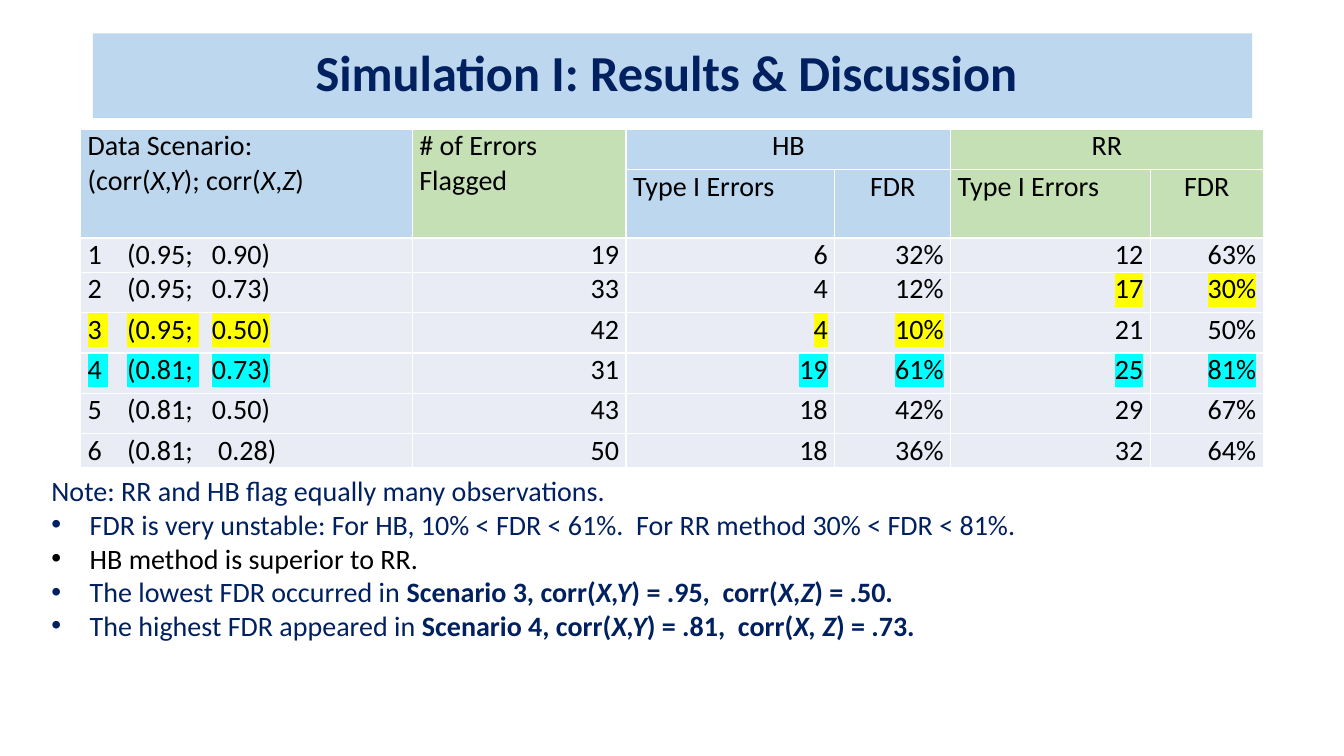
import pptx
import pptx.dml.color
import pptx.enum.text
import pptx.oxml
import pptx.oxml.ns
import pptx.util

Inches, Pt = pptx.util.Inches, pptx.util.Pt
ALIGN = pptx.enum.text.PP_ALIGN
ANCHOR = pptx.enum.text.MSO_ANCHOR

# Content: runs are (text, style), with b for bold and i for italic
TITLE = "Simulation I: Results & Discussion "
HEADERS = [  # first row, first column, last row, last column, colour, alignment, lines
    (0, 0, 1, 0, "blue", ALIGN.LEFT, [
        [("Data Scenario:", "")],
        [("(corr(", ""), ("X,Y", "i"), ("); corr(", ""), ("X", "i"), (",", ""), ("Z", "i"), (")", "")]]),
    (0, 1, 1, 1, "green", ALIGN.LEFT, [[("# of Errors", "")], [("Flagged", "")]]),
    (0, 2, 0, 3, "blue", ALIGN.CENTER, [[("HB", "")]]),
    (0, 4, 0, 5, "green", ALIGN.CENTER, [[("RR", "")]]),
    (1, 2, 1, 2, "blue", ALIGN.LEFT, [[("Type I Errors", "")]]),
    (1, 3, 1, 3, "blue", ALIGN.CENTER, [[("FDR", "")]]),
    (1, 4, 1, 4, "green", ALIGN.LEFT, [[("Type I Errors", "")]]),
    (1, 5, 1, 5, "green", ALIGN.CENTER, [[("FDR", "")]]),
]
SCENARIOS = [  # corr(X,Y), corr(X,Z), then the results
    ("0.95", "0.90", "19", "6", "32%", "12", "63%"),
    ("0.95", "0.73", "33", "4", "12%", "17", "30%"),
    ("0.95", "0.50", "42", "4", "10%", "21", "50%"),
    ("0.81", "0.73", "31", "19", "61%", "25", "81%"),
    ("0.81", "0.50", "43", "18", "42%", "29", "67%"),
    ("0.81", "0.28", "50", "18", "36%", "32", "64%"),
]
HIGHLIGHTS = {  # scenario number: colour and table columns
    2: ("yellow", (4, 5)),
    3: ("yellow", (0, 2, 3)),
    4: ("cyan", (0, 2, 3, 4, 5)),
}
NOTE = [("Note: RR and HB flag equally many observations.", "")]
FINDINGS = [  # colour, runs
    ("navy", [("FDR is very unstable: For HB, 10% < FDR < 61%.  For RR method 30% < FDR < 81%.", "")]),
    ("black", [("HB method is superior to RR.", "")]),
    ("navy", [("The lowest FDR occurred in ", ""), ("Scenario 3, corr(", "b"), ("X,Y", "bi"),
              (") = .95,  corr(", "b"), ("X,Z", "bi"), (") = .50.", "b")]),
    ("navy", [("The highest FDR appeared in ", ""), ("Scenario 4, corr(", "b"), ("X,Y", "bi"),
              (") = .81,  corr(", "b"), ("X, Z", "bi"), (") = .73.", "b")]),
]
COLORS = {"blue": "BDD7EE", "green": "C5E0B4", "row": "E9EBF5", "navy": "002060",
          "black": "000000", "white": "FFFFFF", "yellow": "FFFF00", "cyan": "00FFFF"}
COLUMN_WIDTHS = [3.29, 2.12, 2.07, 1.15, 1.98, 1.12]
ROW_HEIGHTS = [0.4, 0.68, 0.34, 0.4, 0.4, 0.4, 0.4, 0.34]
CELL_FORMAT = {"margin_left": Inches(0.07), "margin_right": Inches(0.07),
               "margin_top": 0, "margin_bottom": 0}
PARAGRAPH_FORMAT = {"space_before": Pt(0), "space_after": Pt(0), "line_spacing": 1.0}
SPACE_WIDTH = 4.5  # points, at 20 pt


def rgb(color):
    return pptx.dml.color.RGBColor.from_string(COLORS[color])


def add_element(parent, markup):
    namespace = pptx.oxml.ns.nsdecls("a")
    parent.append(pptx.oxml.parse_xml(markup.replace(" ", f" {namespace} ", 1)))


def add_run(paragraph, text, style="", color="black", size=20, highlight=None, gap=1):
    """Add a run; gap widens a single space to that many spaces."""
    run = paragraph.add_run()
    run.text = text
    run.font.color.rgb = rgb(color)
    properties = run.font.color and run._r.get_or_add_rPr()
    if highlight:
        add_element(properties, f'<a:highlight ><a:srgbClr val="{COLORS[highlight]}"/></a:highlight>')
    if gap > 1:
        properties.set("spc", str(round((gap - 1) * SPACE_WIDTH * 100)))
    font_format = {"name": "Calibri", "size": Pt(size), "bold": "b" in style, "italic": "i" in style}
    for attribute, value in font_format.items():
        setattr(run.font, attribute, value)


def format_paragraph(paragraph, alignment=ALIGN.LEFT):
    for attribute, value in {**PARAGRAPH_FORMAT, "alignment": alignment}.items():
        setattr(paragraph, attribute, value)


def place(shape, left, top, width, height):
    box = {"left": left, "top": top, "width": width, "height": height}
    for attribute, value in box.items():
        setattr(shape, attribute, Inches(value))


presentation = pptx.Presentation()
presentation.slide_width, presentation.slide_height = Inches(13.33), Inches(7.5)
slide = presentation.slides.add_slide(presentation.slide_layouts[1])
title, findings = slide.placeholders

# Title band
place(title, 0.92, 0.33, 11.5, 0.84)
title.fill.solid()
title.fill.fore_color.rgb = rgb("blue")
title.text_frame.vertical_anchor = ANCHOR.MIDDLE
title.text_frame.auto_size = pptx.enum.text.MSO_AUTO_SIZE.NONE
heading = title.text_frame.paragraphs[0]
format_paragraph(heading, ALIGN.CENTER)
heading.line_spacing = 0.9
add_run(heading, TITLE, "b", "navy", 36)

# Results table: grid, fills and white borders
results = slide.shapes.add_table(
    len(ROW_HEIGHTS), len(COLUMN_WIDTHS), Inches(0.8), Inches(1.28),
    Inches(sum(COLUMN_WIDTHS)), Inches(sum(ROW_HEIGHTS))).table
results.first_row = results.horz_banding = False
for column, width in zip(results.columns, COLUMN_WIDTHS):
    column.width = Inches(width)
for row, height in zip(results.rows, ROW_HEIGHTS):
    row.height = Inches(height)
for cell in results.iter_cells():
    for attribute, value in CELL_FORMAT.items():
        setattr(cell, attribute, value)
    for side in "LRTB":
        add_element(cell._tc.get_or_add_tcPr(),
                    f'<a:ln{side} w="12700"><a:solidFill><a:srgbClr val="{COLORS["white"]}"/>'
                    f'</a:solidFill></a:ln{side}>')
    cell.fill.solid()
    cell.fill.fore_color.rgb = rgb("row")

# Header cells
for top, left, bottom, right, color, alignment, lines in HEADERS:
    header = results.cell(top, left)
    if (top, left) != (bottom, right):
        header.merge(results.cell(bottom, right))
    for row in range(top, bottom + 1):
        for column in range(left, right + 1):
            results.cell(row, column).fill.fore_color.rgb = rgb(color)
    for index, runs in enumerate(lines):
        frame = header.text_frame
        paragraph = frame.add_paragraph() if index else frame.paragraphs[0]
        format_paragraph(paragraph, alignment)
        for text, style in runs:
            add_run(paragraph, text, style)

# Scenario rows
for number, (corr_xy, corr_xz, *values) in enumerate(SCENARIOS, start=1):
    color, marked = HIGHLIGHTS.get(number, (None, ()))
    second_gap = 4 if number == 6 else 3
    label = [(str(number), 1), (" ", 4), (f"({corr_xy};", 1), (" ", second_gap), (f"{corr_xz})", 1)]
    for column, pieces in enumerate([label] + [[(value, 1)] for value in values]):
        paragraph = results.cell(number + 1, column).text_frame.paragraphs[0]
        format_paragraph(paragraph, ALIGN.RIGHT if column else ALIGN.LEFT)
        for text, gap in pieces:
            add_run(paragraph, text, highlight=color if column in marked else None, gap=gap)

# Note and findings
place(findings, 0.41, 4.65, 11.82, 1.78)
findings.text_frame.auto_size = pptx.enum.text.MSO_AUTO_SIZE.NONE
findings.text_frame.vertical_anchor = ANCHOR.TOP
for index, (color, runs) in enumerate([("navy", NOTE)] + FINDINGS):
    frame = findings.text_frame
    paragraph = frame.add_paragraph() if index else frame.paragraphs[0]
    format_paragraph(paragraph)
    properties = paragraph._p.get_or_add_pPr()
    indent = Inches(0.38) if index else 0
    properties.set("marL", str(indent))
    properties.set("indent", str(-indent))
    if index:
        add_element(properties, '<a:buFont typeface="Arial"/>')
    add_element(properties, '<a:buChar char="•"/>' if index else "<a:buNone />")
    for text, style in runs:
        add_run(paragraph, text, style, color)

presentation.save("out.pptx")
